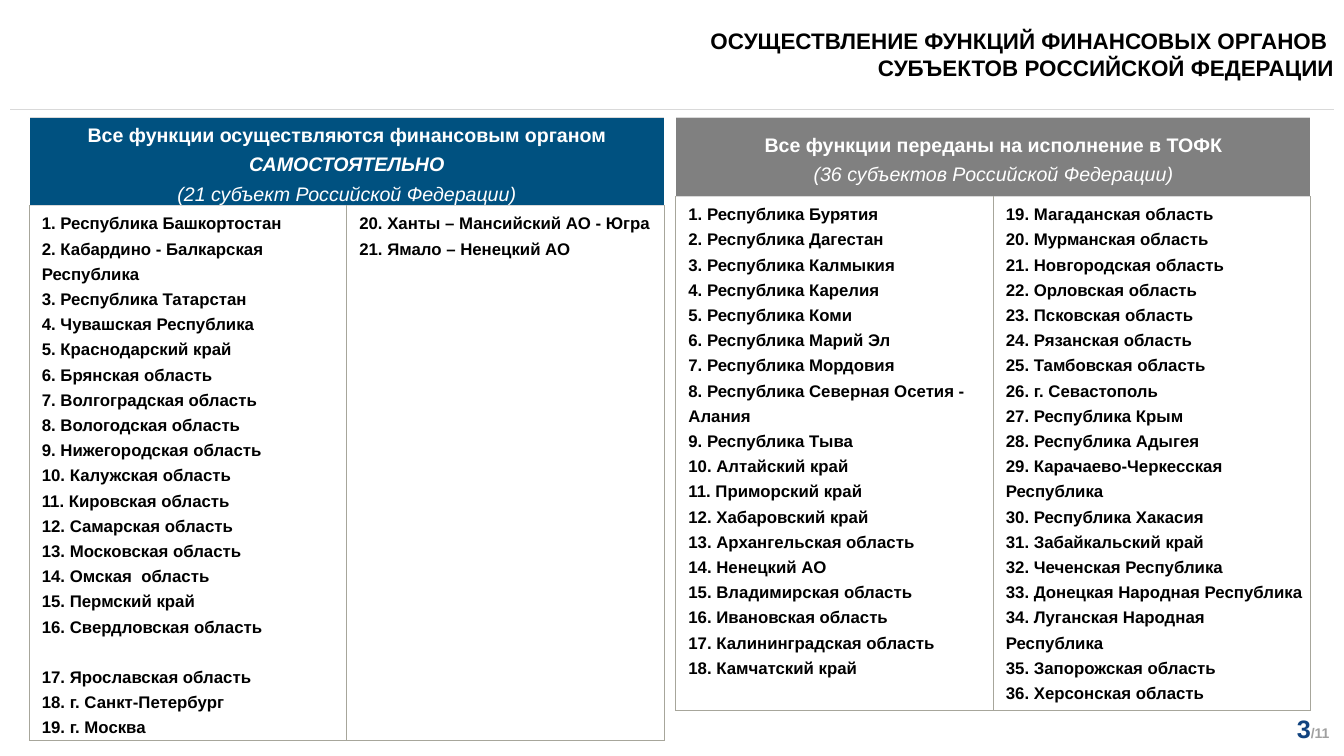
from dataclasses import dataclass

from lxml import etree
from pptx import Presentation
from pptx.dml.color import RGBColor
from pptx.enum.shapes import MSO_CONNECTOR
from pptx.enum.text import MSO_ANCHOR, PP_ALIGN
from pptx.oxml.ns import qn
from pptx.util import Inches, Pt

STRAIGHT = MSO_CONNECTOR.STRAIGHT
RIGHT, CENTER, LEFT = PP_ALIGN.RIGHT, PP_ALIGN.CENTER, PP_ALIGN.LEFT
TOP, MIDDLE = MSO_ANCHOR.TOP, MSO_ANCHOR.MIDDLE

WHITE = RGBColor(0xFF, 0xFF, 0xFF)
BLACK = RGBColor(0, 0, 0)
BLUE = RGBColor(0x00, 0x51, 0x80)
GRAY = RGBColor(0x80, 0x80, 0x80)
RULE_GRAY = RGBColor(0xD9, 0xD9, 0xD9)
BORDER_GRAY = RGBColor(0xA7, 0xA6, 0x9B)
PAGE_BLUE = RGBColor(0x11, 0x43, 0x7F)
PAGE_GRAY = RGBColor(0xA0, 0xA0, 0xA0)

HEADER_BORDERS = {"L": (WHITE, 2.25), "R": (WHITE, 2.25),
                  "T": (RULE_GRAY, 0.25), "B": (RULE_GRAY, 0.25)}
BODY_BORDERS = {"L": (BORDER_GRAY, 1), "R": (BORDER_GRAY, 1),
                "T": (RULE_GRAY, 0.25), "B": (BORDER_GRAY, 1)}
COLUMN_WIDTH = 6.3


@dataclass(frozen=True)
class Span:
    text: str
    size: float
    color: RGBColor
    bold: bool = True
    italic: bool = False


@dataclass(frozen=True)
class RegionTable:
    left: float
    header_height: float
    body_height: float
    fill: RGBColor
    header: list[list[Span]]
    regions: list[str]
    first_column_count: int
    gap_before: int = 0  # number of the region preceded by an empty line


TABLES = [
    RegionTable(
        13.41, 1.57, 10.2, GRAY,
        [[Span("Все функции переданы на исполнение в ТОФК", 28, WHITE)],
         [Span("(36 субъектов Российской Федерации)", 28, WHITE, False, True)]],
        ["Республика Бурятия", "Республика Дагестан", "Республика Калмыкия",
         "Республика Карелия", "Республика Коми", "Республика Марий Эл",
         "Республика Мордовия", "Республика Северная Осетия - Алания",
         "Республика Тыва", "Алтайский край", "Приморский край",
         "Хабаровский край", "Архангельская область", "Ненецкий АО",
         "Владимирская область", "Ивановская область",
         "Калининградская область", "Камчатский край", "Магаданская область",
         "Мурманская область", "Новгородская область", "Орловская область",
         "Псковская область", "Рязанская область", "Тамбовская область",
         "г. Севастополь", "Республика Крым", "Республика Адыгея",
         "Карачаево-Черкесская Республика", "Республика Хакасия",
         "Забайкальский край", "Чеченская Республика",
         "Донецкая Народная Республика", "Луганская Народная Республика",
         "Запорожская область", "Херсонская область"],
        18),
    RegionTable(
        0.58, 1.68, 9.96, BLUE,
        [[Span("Все функции осуществляются финансовым органом ", 28, WHITE),
          Span("САМОСТОЯТЕЛЬНО", 28, WHITE, italic=True)],
         [Span("(21 субъект Российской Федерации)", 28, WHITE, False, True)]],
        ["Республика Башкортостан", "Кабардино - Балкарская Республика",
         "Республика Татарстан", "Чувашская Республика", "Краснодарский край",
         "Брянская область", "Волгоградская область", "Вологодская область",
         "Нижегородская область", "Калужская область", "Кировская область",
         "Самарская область", "Московская область", "Омская  область",
         "Пермский край", "Свердловская область", "Ярославская область",
         "г. Санкт-Петербург", "г. Москва",
         "Ханты – Мансийский АО - Югра", "Ямало – Ненецкий АО"],
        19, gap_before=17),
]


def add_span(paragraph, span: Span) -> None:
    run = paragraph.add_run()
    run.text = span.text
    formats = {"name": "Arial", "size": Pt(span.size),
               "bold": span.bold, "italic": span.italic}
    for attribute, value in formats.items():
        setattr(run.font, attribute, value)
    run.font.color.rgb = span.color


def add_paragraph(frame, index: int, spans: list[Span], alignment, spacing: float):
    paragraph = frame.paragraphs[0] if index == 0 else frame.add_paragraph()
    paragraph.alignment = alignment
    paragraph.line_spacing = Pt(spacing)
    for span in spans:
        add_span(paragraph, span)
    return paragraph


def format_cell(cell, borders: dict, margins: tuple[float, float], anchor) -> None:
    """Set borders, insets and anchor; any fill must be set afterwards."""
    properties = cell._tc.get_or_add_tcPr()
    for side, (color, width) in borders.items():
        line = etree.Element(qn(f"a:ln{side}"), w=str(Pt(width)))
        fill = etree.SubElement(line, qn("a:solidFill"))
        etree.SubElement(fill, qn("a:srgbClr"), val=str(color))
        properties.append(line)
    horizontal, vertical = margins
    cell.margin_left = cell.margin_right = Inches(horizontal)
    cell.margin_top = cell.margin_bottom = Inches(vertical)
    cell.vertical_anchor = anchor


def add_region_table(slide, group: RegionTable) -> None:
    table = slide.shapes.add_table(
        2, 2, Inches(group.left), Inches(2.32), Inches(2 * COLUMN_WIDTH),
        Inches(group.header_height + group.body_height)).table
    table.first_row = table.horz_banding = False
    for column in table.columns:
        column.width = Inches(COLUMN_WIDTH)
    for row, height in zip(table.rows, (group.header_height, group.body_height)):
        row.height = Inches(height)

    header = table.cell(0, 0)
    header.merge(table.cell(0, 1))
    for cell in table.rows[0].cells:
        format_cell(cell, HEADER_BORDERS, (0.01, 0), MIDDLE)
        cell.fill.solid()
        cell.fill.fore_color.rgb = group.fill
    for index, spans in enumerate(group.header):
        add_paragraph(header.text_frame, index, spans, CENTER, 42)

    numbered = list(enumerate(group.regions, 1))
    split = group.first_column_count
    for cell, entries in zip(table.rows[1].cells, (numbered[:split], numbered[split:])):
        format_cell(cell, BODY_BORDERS, (0.13, 0.06), TOP)
        cell.fill.background()
        for index, (number, region) in enumerate(entries):
            spans = [Span(f"{number}. {region}", 24, BLACK)]
            paragraph = add_paragraph(cell.text_frame, index, spans, LEFT, 36)
            paragraph._p.get_or_add_pPr().set("marL", str(Inches(0.12)))
            if number == group.gap_before:
                paragraph.space_before = Pt(36)


def add_title(slide) -> None:
    frame = slide.shapes.add_textbox(0, 0, Inches(26.67), Inches(2.14)).text_frame
    frame.word_wrap = True
    frame.vertical_anchor = MIDDLE
    frame.margin_left = frame.margin_top = frame.margin_bottom = 0
    frame.margin_right = Inches(0.2)
    paragraph = frame.paragraphs[0]
    paragraph.alignment = RIGHT
    add_span(paragraph, Span("ОСУЩЕСТВЛЕНИЕ ФУНКЦИЙ ФИНАНСОВЫХ ОРГАНОВ ", 32, BLACK))
    paragraph.add_line_break()
    add_span(paragraph, Span("СУБЪЕКТОВ РОССИЙСКОЙ ФЕДЕРАЦИИ", 32, BLACK))


def add_page_number(slide) -> None:
    frame = slide.shapes.add_textbox(
        Inches(24.59), Inches(14.1), Inches(1.89), Inches(0.71)).text_frame
    frame.word_wrap = True
    paragraph = frame.paragraphs[0]
    paragraph.alignment = RIGHT
    add_span(paragraph, Span("3", 36, PAGE_BLUE))
    add_span(paragraph, Span("/11", 20, PAGE_GRAY))


def add_title_rule(slide) -> None:
    rule = slide.shapes.add_connector(
        STRAIGHT, Inches(0.2), Inches(2.17), Inches(26.47), Inches(2.17))
    rule.line.color.rgb = RULE_GRAY
    rule.line.width = Pt(1)
    etree.SubElement(rule._element.spPr, qn("a:effectLst"))


def main() -> None:
    presentation = Presentation()
    presentation.slide_width = Inches(26.67)
    presentation.slide_height = Inches(15)
    slide = presentation.slides.add_slide(presentation.slide_layouts[6])
    add_title_rule(slide)
    add_page_number(slide)
    for group in TABLES:
        add_region_table(slide, group)
    add_title(slide)
    presentation.save("out.pptx")


if __name__ == "__main__":
    main()
